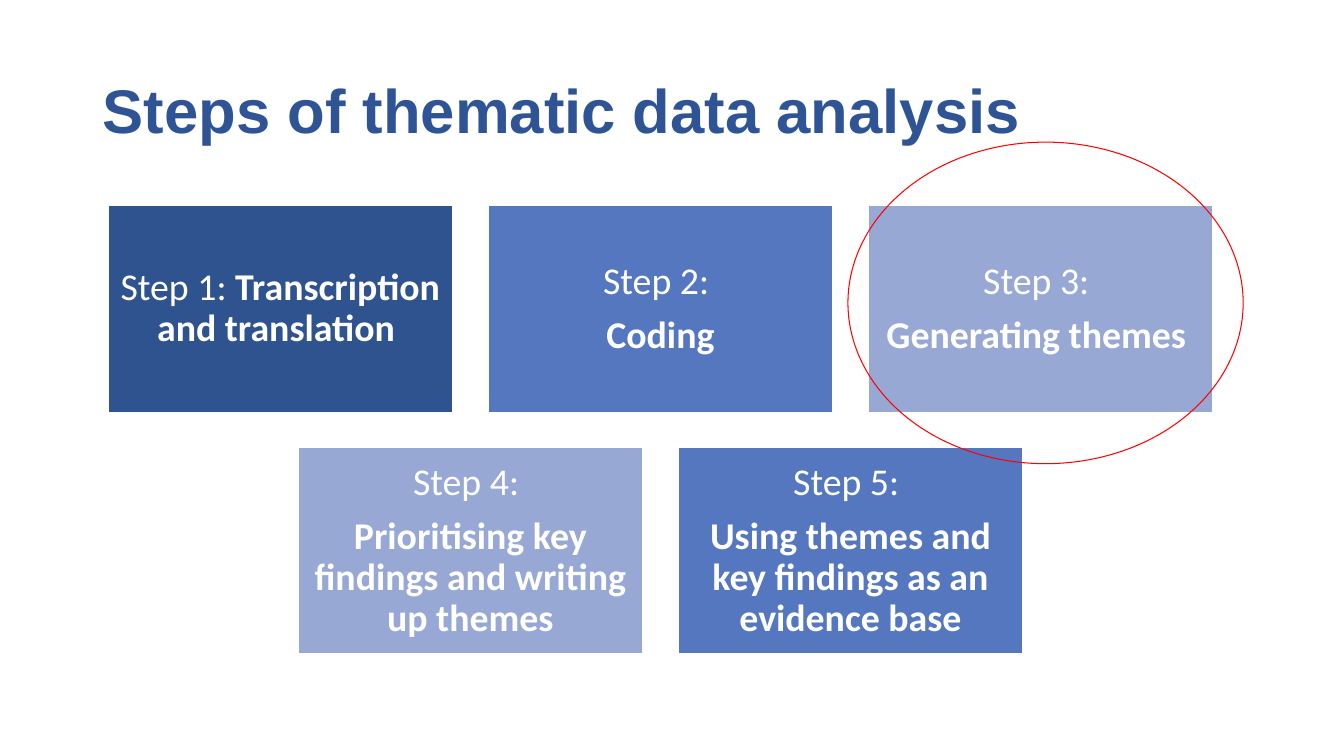
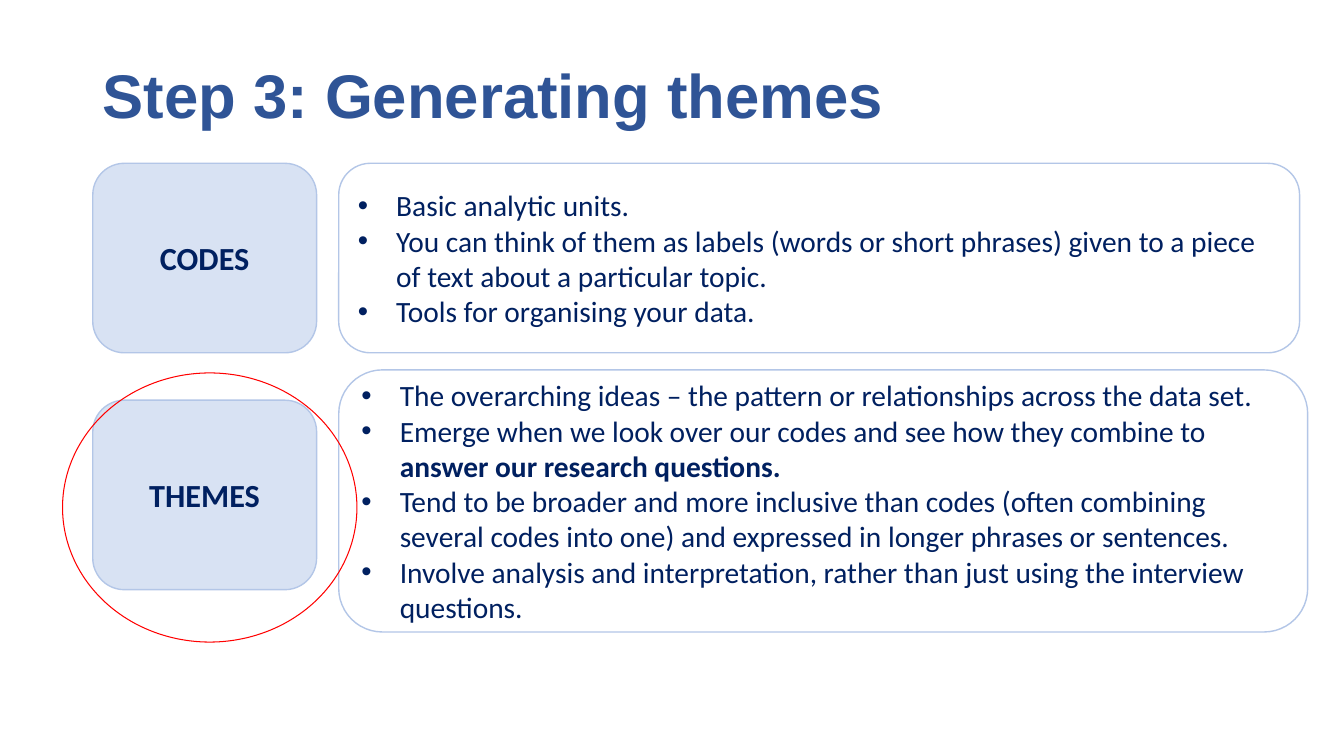
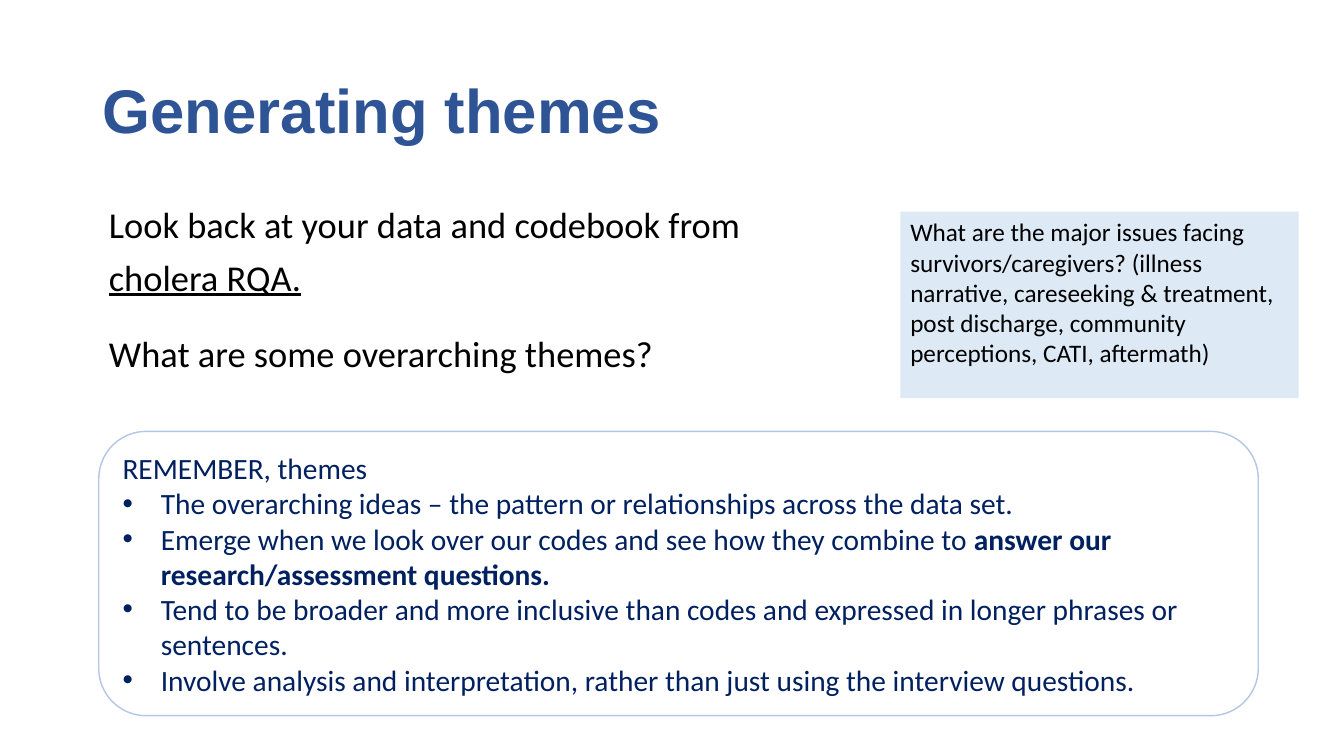
from lxml.etree import SubElement
from pptx import Presentation
from pptx.dml.color import RGBColor
from pptx.enum.shapes import MSO_SHAPE as SHAPE
from pptx.enum.text import MSO_ANCHOR as ANCHOR, MSO_AUTO_SIZE as AUTO, PP_ALIGN as ALIGN
from pptx.oxml.ns import qn
from pptx.util import Inches, Pt

COLORS = {
    "title": "2F5496", "navy": "002060", "black": "000000", "white": "FFFFFF",
    "dark": "2E538F", "mid": "5477C0", "light": "97A8D5",
    "label": "D8E2F3", "outline": "B3C6E7", "note": "DDEAF6", "ring": "FF0000",
}

# A paragraph is a list of runs; a run is text, or (text, style) with style "b" or "u".
STEP_ROWS = [
    [("dark", [["Step 1: ", ("Transcription and translation ", "b")]]),
     ("mid", [["Step 2: "], [("Coding", "b")]]),
     ("light", [["Step 3: "], [("Generating themes ", "b")]])],
    [("light", [["Step 4: "], [("Prioritising key findings and writing up themes", "b")]]),
     ("mid", [["Step 5: "], [("Using themes and key findings as an evidence base", "b")]])],
]

IDEAS = ["The overarching ideas – the pattern or relationships across the data set."]
EMERGE = "Emerge when we look over our codes and see how they combine to "
INTERPRET = ["Involve analysis and interpretation, rather than just using the interview questions."]

CODES = [
    ["Basic analytic units."],
    ["You can think of them as labels (words or short phrases) given to a piece of text "
     "about a particular topic."],
    ["Tools for organising your data."],
]
THEMES = [
    IDEAS,
    [EMERGE, ("answer our research questions.", "b")],
    ["Tend to be broader and more inclusive than codes (often combining several codes "
     "into one) and expressed in longer phrases or sentences."],
    INTERPRET,
]
# label, label top, definition, definition box
DEFINITIONS = [
    ("CODES", 1.62, CODES, (3.36, 1.62, 9.53, 1.88)),
    ("THEMES", 3.97, THEMES, (3.36, 3.67, 9.61, 2.6)),
]

TASK = [
    ["Look back at your data and codebook from ", ("cholera RQA.", "u")],
    ["What are some overarching themes?"],
]
REMINDER = [
    ["REMEMBER, themes"],
    IDEAS,
    [EMERGE, ("answer our research/assessment questions.", "b")],
    ["Tend to be broader and more inclusive than codes and expressed in longer phrases "
     "or sentences."],
    INTERPRET,
]
NOTE = [["What are the major issues facing survivors/caregivers? (illness narrative, "
         "careseeking & treatment, post discharge, community perceptions, CATI, aftermath)"]]


def rgb(name):
    return RGBColor.from_string(COLORS[name])


def set_bullet(p, on):
    pPr = p._p.get_or_add_pPr()
    indent = Inches(0.38) if on else 0
    pPr.set("marL", str(indent))
    pPr.set("indent", str(-indent))
    if on:
        SubElement(pPr, qn("a:buFont")).set("typeface", "Arial")
        SubElement(pPr, qn("a:buChar")).set("char", "•")
    else:
        SubElement(pPr, qn("a:buNone"))


def write(shape, paragraphs, size, color, font="Calibri", bold=False, align=ALIGN.LEFT,
          anchor=ANCHOR.MIDDLE, spacing=1.0, gap=0, bullets_from=None, inset=None):
    """Fill a shape with text; gap is the space between paragraphs in points."""
    tf = shape.text_frame
    tf.word_wrap, tf.auto_size, tf.vertical_anchor = True, AUTO.NONE, anchor
    if inset is not None:
        tf.margin_left = tf.margin_right = tf.margin_top = tf.margin_bottom = Inches(inset)
    for i, runs in enumerate(paragraphs):
        p = tf.add_paragraph() if i else tf.paragraphs[0]
        p.alignment, p.line_spacing = align, spacing
        p.space_before, p.space_after = Pt(gap if i else 0), Pt(0)
        set_bullet(p, bullets_from is not None and i >= bullets_from)
        for run in runs:
            text, style = (run, "") if isinstance(run, str) else run
            r = p.add_run()
            r.text = text
            r.font.name, r.font.size, r.font.color.rgb = font, Pt(size), rgb(color)
            r.font.bold = bold or style == "b"
            r.font.underline = style == "u"


def place(shape, box):
    shape.left, shape.top, shape.width, shape.height = (Inches(v) for v in box)


def add_box(s, kind, box, fill=None, line=None, width=1):
    sp = s.shapes.add_shape(kind, *(Inches(v) for v in box))
    sp.shadow.inherit = False
    if fill:
        sp.fill.solid()
        sp.fill.fore_color.rgb = rgb(fill)
    else:
        sp.fill.background()
    if line:
        sp.line.color.rgb, sp.line.width = rgb(line), Pt(width)
    else:
        sp.line.fill.background()
    return sp


def add_ring(s, box):
    add_box(s, SHAPE.OVAL, box, line="ring", width=0.75)


def add_bullet_panel(s, box, paragraphs, bullets_from=0):
    sp = add_box(s, SHAPE.ROUNDED_RECTANGLE, box, line="outline")
    write(sp, paragraphs, 21, "navy", bullets_from=bullets_from)


def add_slide(prs, layout, title, top=0.4, height=1.45):
    s = prs.slides.add_slide(prs.slide_layouts[layout])
    place(s.shapes.title, (0.92, top, 11.5, height))
    write(s.shapes.title, [[title]], 44, "title", font="Arial", bold=True, spacing=0.9)
    return s


def build_steps(prs):
    s = add_slide(prs, 5, "Steps of thematic data analysis")
    center, top, width, height, gap = 6.55, 2.04, 3.42, 2.05, 0.35
    for row, steps in enumerate(STEP_ROWS):
        left = center - (len(steps) * (width + gap) - gap) / 2
        for col, (fill, text) in enumerate(steps):
            box = (left + col * (width + gap), top + row * (height + gap), width, height)
            sp = add_box(s, SHAPE.RECTANGLE, box, fill, "white")
            write(sp, text, 27, "white", align=ALIGN.CENTER, spacing=0.9, gap=9.4, inset=0.11)
    add_ring(s, (8.41, 1.41, 3.92, 3.19))


def build_definitions(prs):
    s = add_slide(prs, 5, "Step 3: Generating themes", top=0.41, height=1.13)
    for label, top, text, box in DEFINITIONS:
        sp = add_box(s, SHAPE.ROUNDED_RECTANGLE, (0.92, top, 2.22, 1.88), "label", "outline")
        write(sp, [[label]], 23, "navy", bold=True, align=ALIGN.CENTER)
        add_bullet_panel(s, box, text)
    add_ring(s, (0.62, 3.7, 2.92, 2.67))


def build_exercise(prs):
    s = add_slide(prs, 1, "Generating themes")
    body = s.placeholders[1]
    place(body, (0.98, 1.87, 7.37, 2.26))
    write(body, TASK, 26, "black", anchor=ANCHOR.TOP, spacing=1.2, gap=17)
    add_bullet_panel(s, (0.98, 4.28, 11.5, 2.82), REMINDER, bullets_from=1)
    note = add_box(s, SHAPE.RECTANGLE, (8.93, 2.1, 3.95, 1.85), "note")
    write(note, NOTE, 18, "black", anchor=ANCHOR.TOP)


def main():
    prs = Presentation()
    prs.slide_width, prs.slide_height = Inches(13.33), Inches(7.5)
    build_steps(prs)
    build_definitions(prs)
    build_exercise(prs)
    prs.save("out.pptx")


if __name__ == "__main__":
    main()
